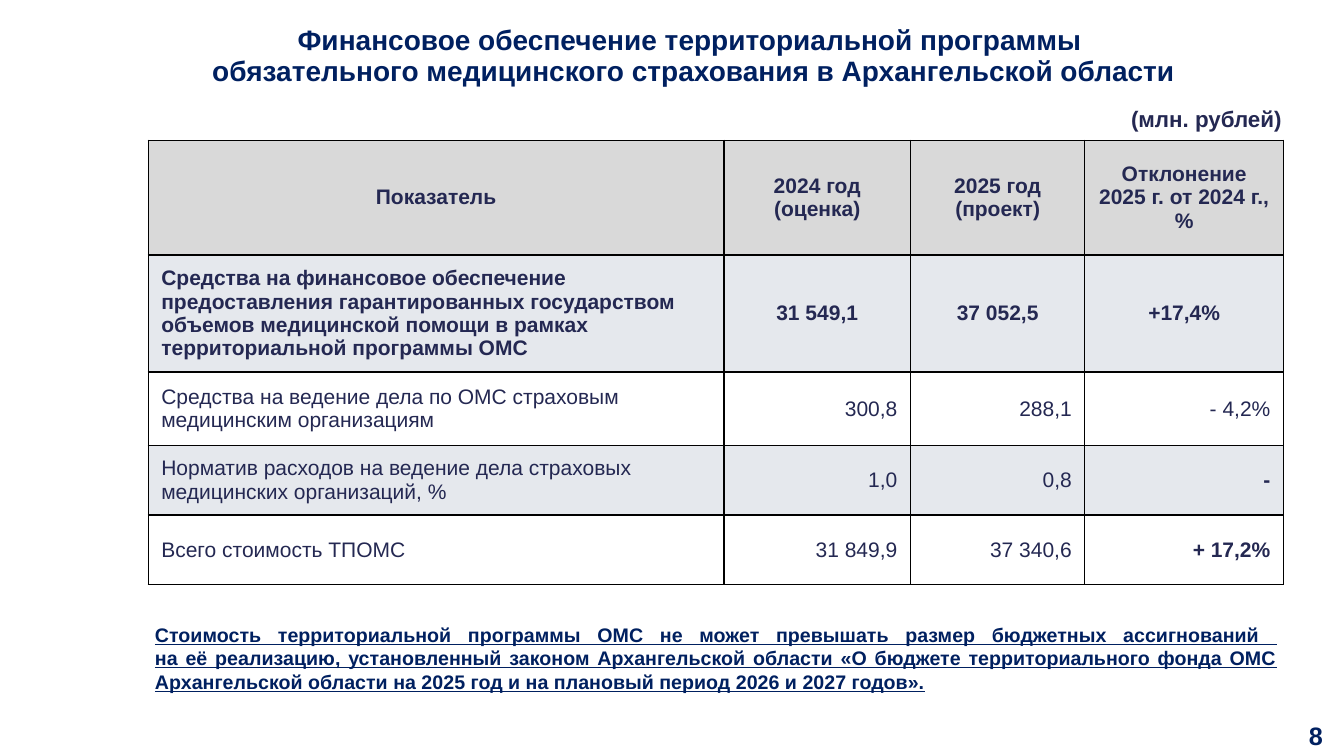
from copy import deepcopy
from dataclasses import dataclass
from typing import Any

from lxml.etree import SubElement
from pptx import Presentation
from pptx.dml.color import RGBColor
from pptx.enum.shapes import MSO_SHAPE
from pptx.enum.text import MSO_ANCHOR, PP_ALIGN
from pptx.oxml import parse_xml
from pptx.oxml.ns import nsdecls, qn
from pptx.util import Inches, Pt

COLORS = {"navy": "002060", "ink": "242852", "header": "D9D9D9", "band": "7F8FA9", "border": "000000"}
BAND_ALPHA = 20000
COLUMN_WIDTHS = (5.71, 1.85, 1.73, 1.97)
ROW_HEIGHTS = (1.14, 1.16, 0.73, 0.69, 0.69)
WIDE_MARGINS = (0.13, 0.05)
TIGHT_MARGINS = (0.1, 0)


@dataclass
class Caption:
    text: str
    place: tuple[float, float, float, float]
    size: int
    color: str
    align: PP_ALIGN
    anchor: MSO_ANCHOR = MSO_ANCHOR.TOP
    line_spacing: float = 1.0
    underline: bool = False
    rounded: bool = False


@dataclass
class Row:
    texts: tuple[str, ...]
    bold: tuple[bool, ...]
    label_align: PP_ALIGN
    value_align: PP_ALIGN


CAPTIONS = (
    Caption("Финансовое обеспечение территориальной программы \vобязательного медицинского страхования в Архангельской области",
            (0.88, 0.21, 12, 0.71), 20, "navy", PP_ALIGN.CENTER, MSO_ANCHOR.MIDDLE, 0.92),
    Caption("(млн. рублей)", (10.29, 0.99, 2.52, 0.37), 16, "ink", PP_ALIGN.RIGHT),
    Caption("Стоимость территориальной программы ОМС не может превышать размер бюджетных ассигнований \v"
            "на её реализацию, установленный законом Архангельской области «О бюджете территориального фонда ОМС "
            "Архангельской области на 2025 год и на плановый период 2026 и 2027 годов».",
            (1.39, 6.03, 11.42, 0.99), 14, "navy", PP_ALIGN.JUSTIFY, MSO_ANCHOR.MIDDLE,
            underline=True, rounded=True),
    Caption("8", (12.49, 7.1, 0.73, 0.4), 18, "navy", PP_ALIGN.RIGHT),
)

ALL_BOLD = (True,) * 4
PLAIN = (False,) * 4
LAST_BOLD = (False, False, False, True)
ROWS = (
    Row(("Показатель", "2024 год (оценка)", "2025 год\n(проект)", "Отклонение\n2025 г. от 2024 г., %"),
        ALL_BOLD, PP_ALIGN.CENTER, PP_ALIGN.CENTER),
    Row(("Средства на финансовое обеспечение предоставления гарантированных государством "
         "объемов медицинской помощи в рамках территориальной программы ОМС",
         "31 549,1", "37 052,5", "+17,4%"), ALL_BOLD, PP_ALIGN.LEFT, PP_ALIGN.CENTER),
    Row(("Средства на ведение дела по ОМС страховым медицинским организациям",
         "300,8", "288,1", "- 4,2%"), PLAIN, PP_ALIGN.LEFT, PP_ALIGN.RIGHT),
    Row(("Норматив расходов на ведение дела страховых медицинских организаций, %",
         "1,0", "0,8", "-"), LAST_BOLD, PP_ALIGN.LEFT, PP_ALIGN.RIGHT),
    Row(("Всего стоимость ТПОМС", "31 849,9", "37 340,6", "+ 17,2%"),
        LAST_BOLD, PP_ALIGN.LEFT, PP_ALIGN.RIGHT),
)


def write_text(frame: Any, text: str, align: PP_ALIGN, color: str,
               font_format: dict[str, Any], line_spacing: float = 1.0) -> None:
    frame.text = text
    for paragraph in frame.paragraphs:
        paragraph.alignment = align
        paragraph.line_spacing = line_spacing
        for span in paragraph.runs:
            span.font.color.rgb = RGBColor.from_string(COLORS[color])
            for name, value in {"name": "Arial", **font_format}.items():
                setattr(span.font, name, value)
        for line_break in paragraph._p.findall(qn("a:br")):
            line_break.insert(0, deepcopy(paragraph.runs[0]._r.rPr))


def add_caption(page: Any, caption: Caption) -> None:
    place = [Inches(length) for length in caption.place]
    if caption.rounded:
        box = page.shapes.add_shape(MSO_SHAPE.ROUNDED_RECTANGLE, *place)
        box.shadow.inherit = False
        box.fill.background()
        box.line.fill.background()
    else:
        box = page.shapes.add_textbox(*place)
    box.text_frame.word_wrap = True
    box.text_frame.vertical_anchor = caption.anchor
    font_format = {"size": Pt(caption.size), "bold": True, "underline": caption.underline}
    write_text(box.text_frame, caption.text, caption.align, caption.color, font_format, caption.line_spacing)


def add_borders(cell: Any) -> None:
    properties = cell._tc.get_or_add_tcPr()
    for index, side in enumerate(("lnL", "lnR", "lnT", "lnB")):
        properties.insert(index, parse_xml(
            f'<a:{side} {nsdecls("a")} w="{Pt(1)}"><a:solidFill>'
            f'<a:srgbClr val="{COLORS["border"]}"/></a:solidFill></a:{side}>'))


def fill_cell(cell: Any, row_index: int) -> None:
    if row_index and row_index % 2 == 0:
        cell.fill.background()
        return
    cell.fill.solid()
    cell.fill.fore_color.rgb = RGBColor.from_string(COLORS["band" if row_index else "header"])
    if row_index:
        shade = cell._tc.tcPr.find(f'{qn("a:solidFill")}/{qn("a:srgbClr")}')
        SubElement(shade, qn("a:alpha"), val=str(BAND_ALPHA))


def add_budget_table(page: Any) -> None:
    place = (Inches(1.47), Inches(1.39), Inches(sum(COLUMN_WIDTHS)), Inches(sum(ROW_HEIGHTS)))
    table = page.shapes.add_table(len(ROWS), len(COLUMN_WIDTHS), *place).table
    table.first_row = table.horz_banding = False
    for column, width in zip(table.columns, COLUMN_WIDTHS):
        column.width = Inches(width)
    for row_index, (row, height) in enumerate(zip(ROWS, ROW_HEIGHTS)):
        table.rows[row_index].height = Inches(height)
        for column_index, (text, bold) in enumerate(zip(row.texts, row.bold)):
            cell = table.cell(row_index, column_index)
            tight = row_index == 0 and column_index >= 2
            side, edge = TIGHT_MARGINS if tight else WIDE_MARGINS
            cell_format = {"margin_left": Inches(side), "margin_right": Inches(side),
                           "margin_top": Inches(edge), "margin_bottom": Inches(edge),
                           "vertical_anchor": MSO_ANCHOR.MIDDLE}
            for name, value in cell_format.items():
                setattr(cell, name, value)
            align = row.value_align if column_index else row.label_align
            write_text(cell.text_frame, text, align, "ink", {"size": Pt(15), "bold": bold})
            fill_cell(cell, row_index)
            add_borders(cell)


def main() -> None:
    """Build the slide on financing of the regional medical insurance programme."""
    deck = Presentation()
    deck.slide_width, deck.slide_height = Inches(13.33), Inches(7.5)
    page = deck.slides.add_slide(deck.slide_layouts[6])
    add_budget_table(page)
    for caption in CAPTIONS:
        add_caption(page, caption)
    deck.save("out.pptx")


if __name__ == "__main__":
    main()
